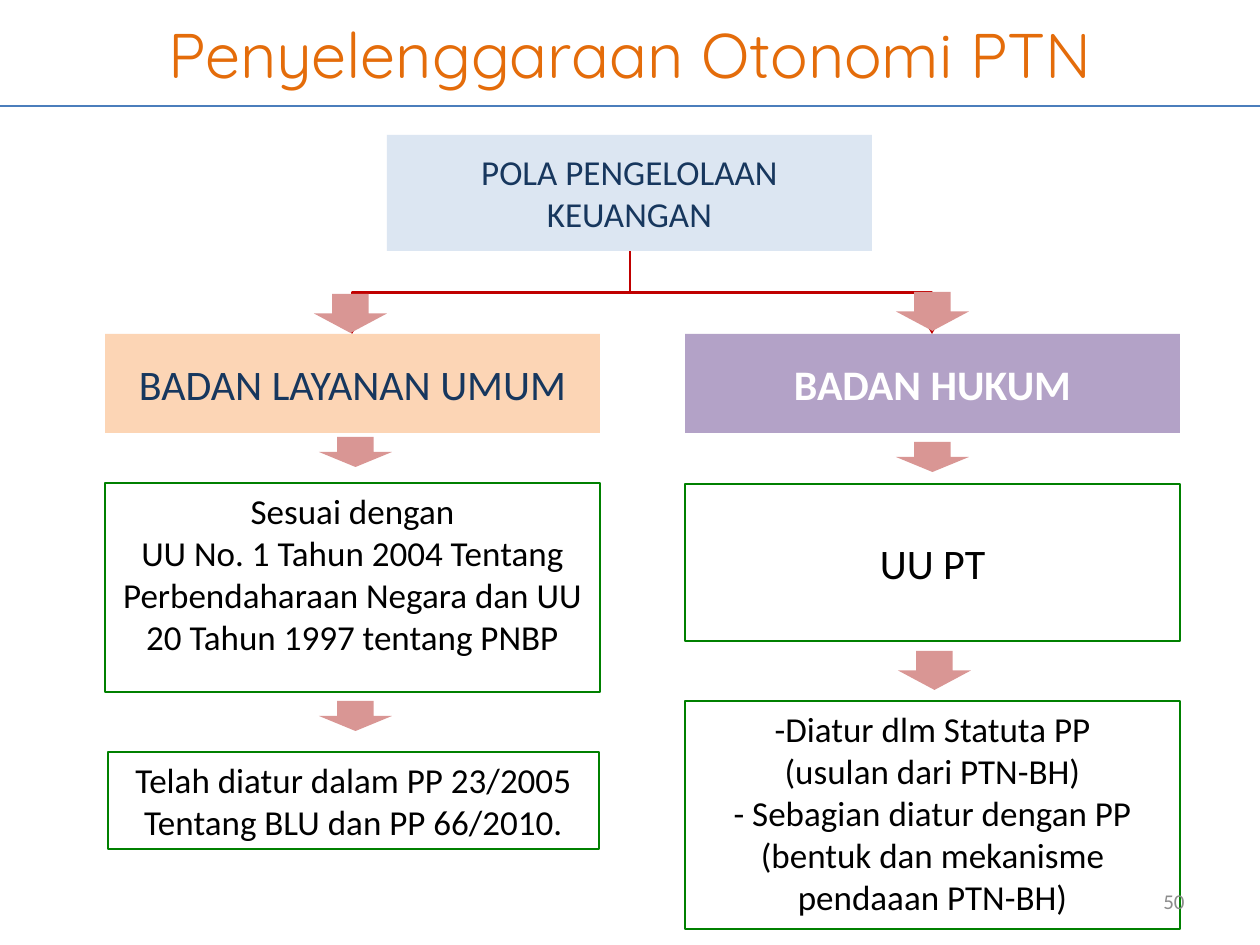
"""Build the slide on how autonomous state universities manage finances."""
from lxml import etree
from pptx import Presentation
from pptx import util as u
from pptx.dml.color import RGBColor
from pptx.enum import shapes, text
from pptx.oxml.ns import qn

PX = 914400 / 126
LEFT, RIGHT, COLUMN = 105, 685, 495
INK, NAVY, GREEN, RED, PINK = "000000", "17375E", "008000", "C00000", "D99694"
MIDDLE, TOP = text.MSO_ANCHOR.MIDDLE, text.MSO_ANCHOR.TOP
CENTER, END = text.PP_ALIGN.CENTER, text.PP_ALIGN.RIGHT

# place, lines, size, colour, bold, fill, border, anchor
BOXES = [
    ((387, 135, 485, 116), ["POLA PENGELOLAAN KEUANGAN"], 20, NAVY, False, "DCE6F2", None, MIDDLE),
    ((LEFT, 334, COLUMN, 99), ["BADAN LAYANAN UMUM"], 24, NAVY, False, "FCD5B5", None, MIDDLE),
    ((RIGHT, 334, COLUMN, 99), ["BADAN HUKUM"], 24, "FFFFFF", True, "B3A2C7", None, MIDDLE),
    ((LEFT, 483, COLUMN, 209),
     ["Sesuai dengan", "UU No. 1 Tahun 2004 Tentang",
      "Perbendaharaan Negara dan UU 20 Tahun 1997 tentang PNBP"],
     20, INK, False, None, GREEN, TOP),
    ((RIGHT, 484, COLUMN, 157), ["UU PT"], 24, INK, False, None, GREEN, MIDDLE),
    ((108, 752, 491, 97), ["Telah diatur dalam PP 23/2005 Tentang BLU dan PP 66/2010."],
     20, INK, False, None, GREEN, TOP),
    ((RIGHT, 701, COLUMN, 228),
     ["-Diatur dlm Statuta PP", "(usulan dari PTN-BH)",
      "- Sebagian diatur dengan PP (bentuk dan mekanisme pendaaan PTN-BH)"],
     20, INK, False, None, GREEN, TOP),
]
STEP_ARROWS = [(319, 437, 30), (319, 701, 30), (896, 442, 30), (898, 651, 39)]
BRANCH_ARROWS = [(896, 292, 39), (314, 294, 39)]
ARROW_WIDTH = 73
BRANCH_START = (630, 251)
BRANCH_ENDS = [(352, 334), (932, 334)]


def px(*values):
    return [u.Emu(round(value * PX)) for value in values]


def color(code):
    return RGBColor.from_string(code)


def write(shape, lines, size, code, font="Calibri", bold=False, anchor=MIDDLE, align=CENTER):
    frame = shape.text_frame
    frame.word_wrap = True
    frame.vertical_anchor = anchor
    for index, line in enumerate(lines):
        paragraph = frame.paragraphs[0] if index == 0 else frame.add_paragraph()
        paragraph.alignment = align
        run = paragraph.add_run()
        run.text = line
        run.font.size, run.font.name, run.font.bold = u.Pt(size), font, bold
        run.font.color.rgb = color(code)


def add_block(slide, kind, place, fill=None, border=None):
    shape = slide.shapes.add_shape(kind, *px(*place))
    shape.shadow.inherit = False
    if fill:
        shape.fill.solid()
        shape.fill.fore_color.rgb = color(fill)
    else:
        shape.fill.background()
    if border:
        shape.line.color.rgb = color(border)
        shape.line.width = u.Pt(0.75)
    else:
        shape.line.fill.background()
    return shape


def add_line(slide, kind, start, end, code, width):
    connector = slide.shapes.add_connector(kind, *px(*start, *end))
    connector.line.color.rgb = color(code)
    connector.line.width = u.Pt(width)
    etree.SubElement(connector._element.spPr, qn("a:effectLst"))
    return connector


def add_branch(slide, start, end):
    """Draw an elbow that leaves downwards, as a quarter-turned connector."""
    middle_x, middle_y = (start[0] + end[0]) / 2, (start[1] + end[1]) / 2
    half_width, half_height = (end[1] - start[1]) / 2, abs(end[0] - start[0]) / 2
    to_right = end[0] > start[0]
    side = half_width if to_right else -half_width
    connector = add_line(slide, shapes.MSO_CONNECTOR.ELBOW,
                         (middle_x + side, middle_y - half_height),
                         (middle_x - side, middle_y + half_height), RED, 1.5)
    connector._element.spPr.find(qn("a:xfrm")).set("rot", str((270 if to_right else 90) * 60000))
    line = connector._element.spPr.find(qn("a:ln"))
    etree.SubElement(line, qn("a:tailEnd"), type="arrow")


def add_arrows(slide, arrows):
    for left, top, height in arrows:
        add_block(slide, shapes.MSO_SHAPE.DOWN_ARROW, (left, top, ARROW_WIDTH, height), PINK)


def main():
    presentation = Presentation()
    presentation.slide_width, presentation.slide_height = px(1260, 945)
    slide = presentation.slides.add_slide(presentation.slide_layouts[6])

    title = slide.shapes.add_textbox(*px(0, 0, 1260, 106))
    write(title, ["Penyelenggaraan Otonomi PTN"], 36, "E46C0A", "Quicksand")
    add_line(slide, shapes.MSO_CONNECTOR.STRAIGHT, (0, 106), (1260, 106), "4B7EBC", 0.75)

    for place, lines, size, code, bold, fill, border, anchor in BOXES:
        box = add_block(slide, shapes.MSO_SHAPE.RECTANGLE, place, fill, border)
        write(box, lines, size, code, bold=bold, anchor=anchor)
    add_arrows(slide, STEP_ARROWS)
    for end in BRANCH_ENDS:
        add_branch(slide, BRANCH_START, end)
    add_arrows(slide, BRANCH_ARROWS)

    number = slide.shapes.add_textbox(*px(903, 876, 294, 50))
    write(number, ["50"], 12, "8C8C8C", align=END)
    presentation.save("out.pptx")


if __name__ == "__main__":
    main()
